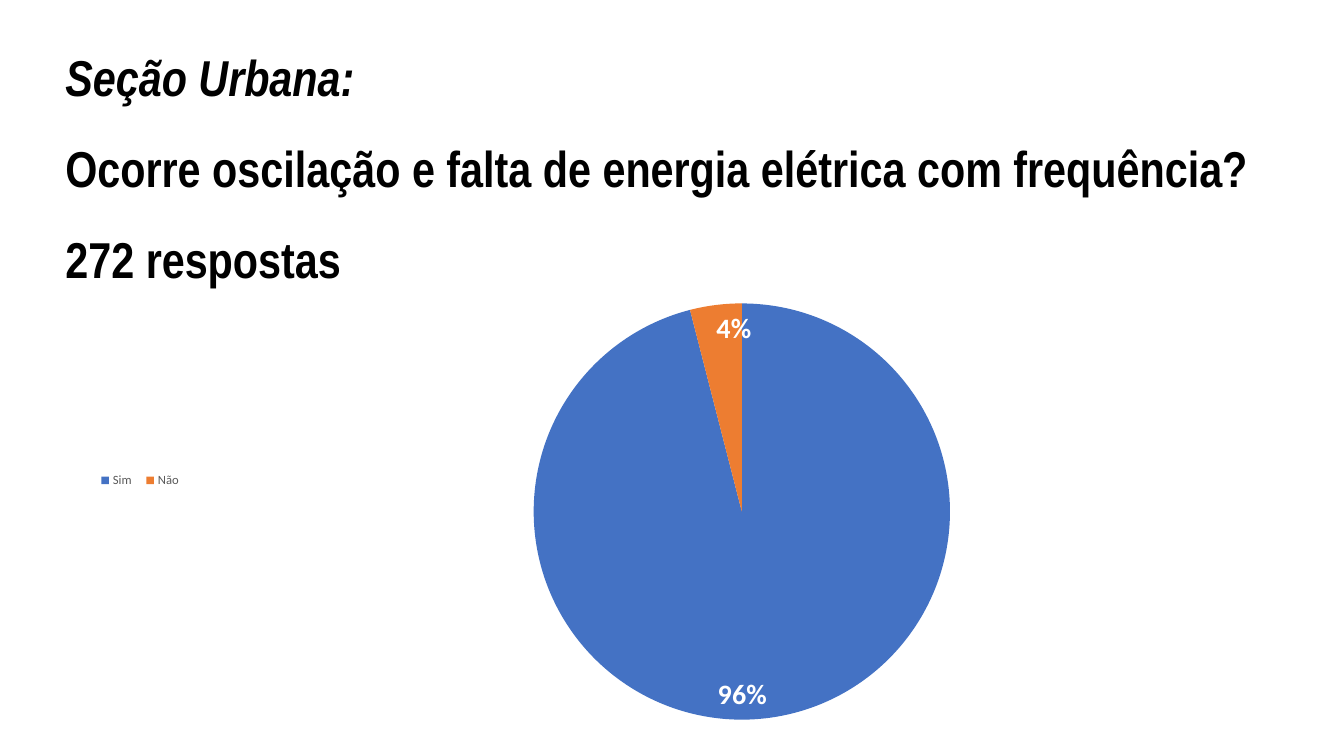
from lxml import etree
from pptx import Presentation
from pptx.chart.data import CategoryChartData
from pptx.dml.color import RGBColor
from pptx.enum.chart import XL_CHART_TYPE, XL_LABEL_POSITION, XL_LEGEND_POSITION
from pptx.enum.text import MSO_ANCHOR
from pptx.oxml.ns import qn
from pptx.util import Pt

PIE = XL_CHART_TYPE.PIE
INSIDE_END = XL_LABEL_POSITION.INSIDE_END
LEGEND_TOP = XL_LEGEND_POSITION.TOP
MIDDLE = MSO_ANCHOR.MIDDLE

BLACK = RGBColor(0x00, 0x00, 0x00)
WHITE = RGBColor(0xFF, 0xFF, 0xFF)
GRAY = RGBColor(0x59, 0x59, 0x59)
BLUE = RGBColor(0x44, 0x72, 0xC4)
ORANGE = RGBColor(0xED, 0x7D, 0x31)

TITLE_LINES = [
    ("Seção Urbana:", True),
    ("Ocorre oscilação e falta de energia elétrica com frequência?", False),
    ("272 respostas", False),
]
ANSWERS = [("Sim ", 96, BLUE), ("Não", 4, ORANGE)]


def format_font(font, color, **values):
    font.color.rgb = color
    for name, value in values.items():
        setattr(font, name, value)


def make_layout(target, **fractions):
    """Build a manual chart layout; fractions are of the chart's size."""
    layout = etree.Element(qn("c:layout"))
    manual = etree.SubElement(layout, qn("c:manualLayout"))
    settings = {"xMode": "edge", "yMode": "edge", **fractions}
    if target:
        settings = {"layoutTarget": target, **settings}
    for name, value in settings.items():
        etree.SubElement(manual, qn(f"c:{name}")).set("val", str(value))
    return layout


deck = Presentation()
deck.slide_width, deck.slide_height = Pt(960), Pt(540)
page = deck.slides.add_slide(deck.slide_layouts[6])

# Title
title_box = page.shapes.add_textbox(Pt(39.6), Pt(49), Pt(881.3), Pt(119.5))
title_frame = title_box.text_frame
title_frame.word_wrap = True
title_frame.vertical_anchor = MIDDLE
para = title_frame.paragraphs[0]
para.line_spacing = 1.5
for number, (line, italic) in enumerate(TITLE_LINES):
    if number:
        para.add_line_break()
    span = para.add_run()
    span.text = line
    format_font(span.font, BLACK, name="Arial Narrow", size=Pt(36), bold=True, italic=italic)

# Pie chart
chart_data = CategoryChartData()
chart_data.categories = [answer for answer, _, _ in ANSWERS]
chart_data.add_series("Series 1", [share for _, share, _ in ANSWERS])
chart = page.shapes.add_chart(
    PIE, Pt(67), Pt(216.7), Pt(826.6), Pt(297.4), chart_data
).chart
chart.has_title = False
format_font(chart.font, BLACK, name="Calibri", size=Pt(10))

plot = chart.plots[0]
plot.vary_by_categories = True
for index, (_, _, color) in enumerate(ANSWERS):
    fill = plot.series[0].points[index].format.fill
    fill.solid()
    fill.fore_color.rgb = color

labels = plot.series[0].data_labels
labels.show_percentage = True
labels.show_value = False
labels.number_format = "0%"
labels.number_format_is_linked = False
labels.position = INSIDE_END
format_font(labels.font, WHITE, name="Calibri", size=Pt(20), bold=True)

chart.has_legend = True
legend = chart.legend
legend.position = LEGEND_TOP
legend.include_in_layout = False
format_font(legend.font, GRAY, name="Calibri", size=Pt(9))

# Manual placement of pie and legend
plot_area = chart.element.find(".//" + qn("c:plotArea"))
legend_part = chart.element.find(".//" + qn("c:legend"))
for part in (plot_area, legend_part):
    for old_layout in part.findall(qn("c:layout")):
        part.remove(old_layout)
plot_area.insert(0, make_layout("inner", x=0.37, y=0, w=0.38, h=1))
legend_part.find(qn("c:legendPos")).addnext(
    make_layout(None, x=0, y=0.39, w=0.08, h=0.07)
)

deck.save("out.pptx")
